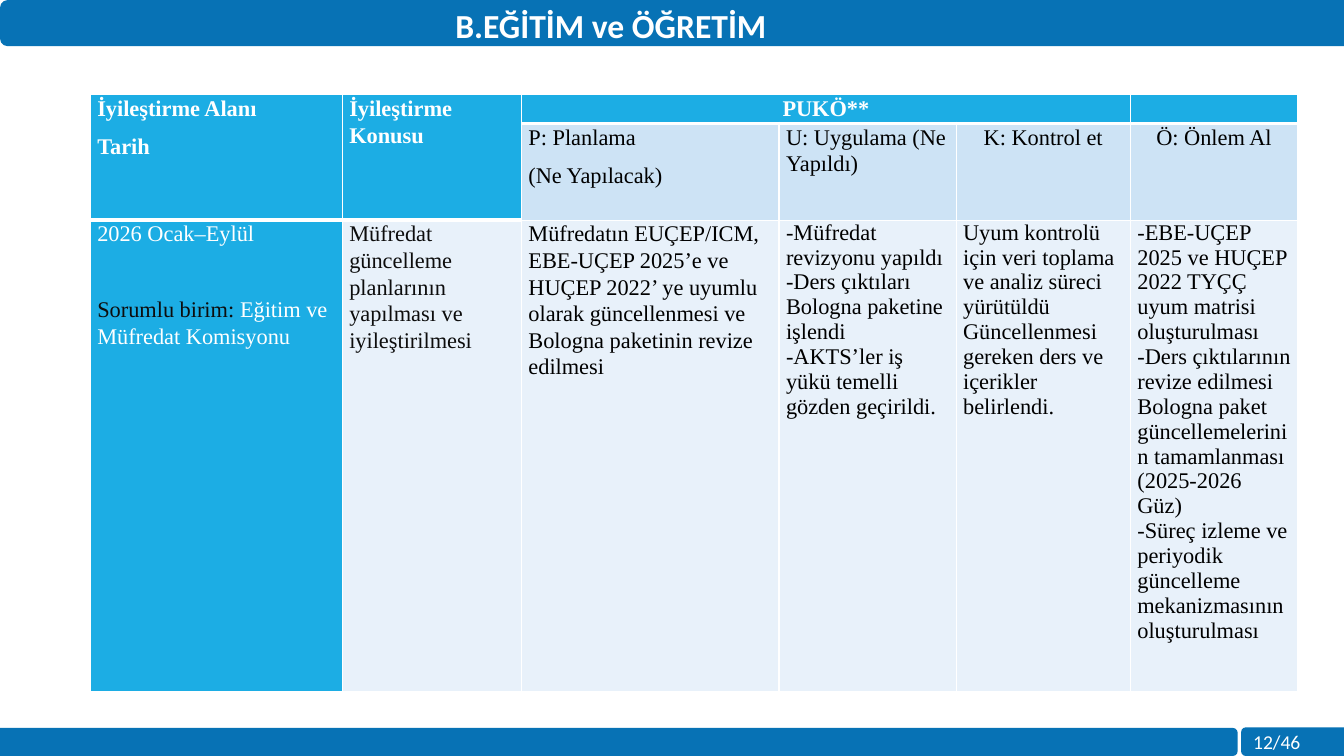
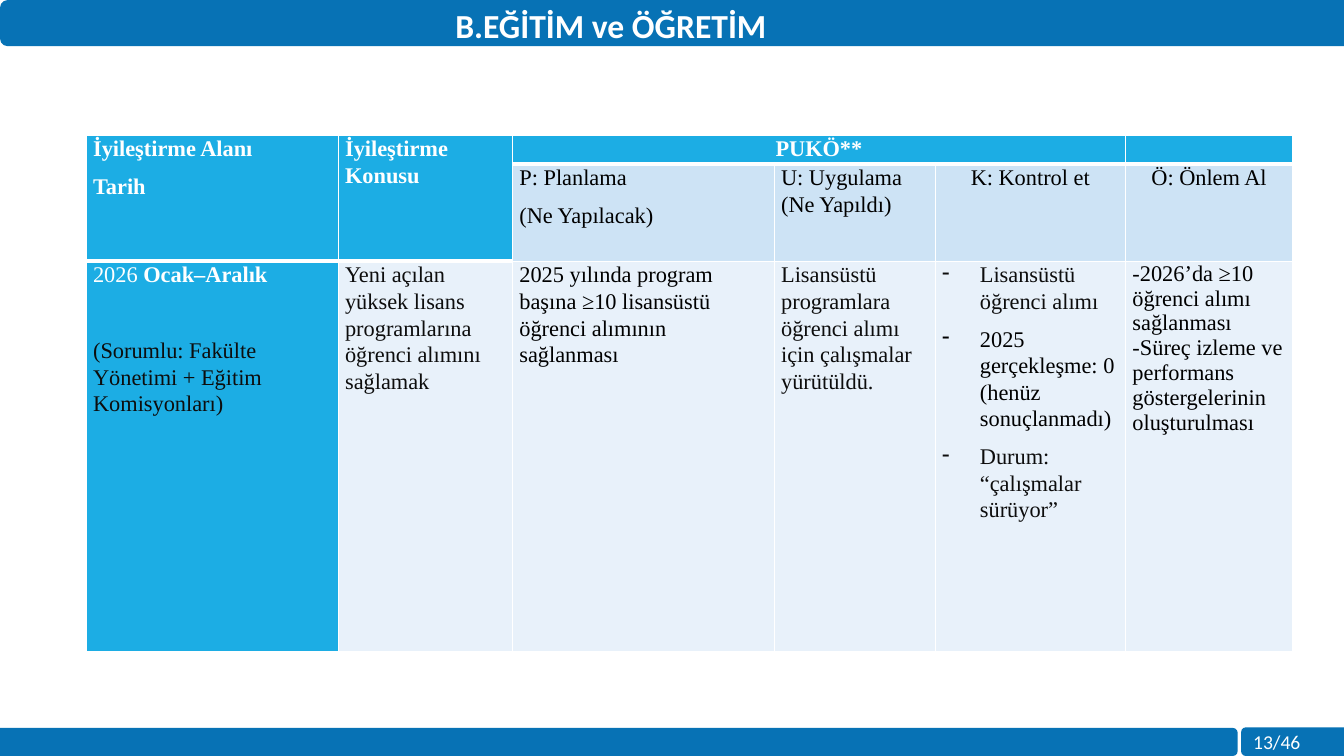
from lxml import etree
from pptx import Presentation
from pptx.dml.color import RGBColor
from pptx.enum.shapes import MSO_SHAPE
from pptx.enum.text import MSO_AUTO_SIZE, PP_ALIGN
from pptx.oxml.ns import qn
from pptx.util import Pt

CENTER = PP_ALIGN.CENTER
BAND_SHAPE = MSO_SHAPE.ROUND_2_SAME_RECTANGLE
FIT_SHAPE = MSO_AUTO_SIZE.SHAPE_TO_FIT_TEXT

COLORS = {
    "band": "0772B5",
    "header": "1CADE4",
    "subheader": "CDE3F5",
    "body": "E8F1FA",
    "white": "FFFFFF",
    "black": "000000",
    "ink": "0D0D0D",
}
SLIDE_WIDTH, SLIDE_HEIGHT = 960, 540
TITLE = "B.EĞİTİM ve ÖĞRETİM"
PAGE_COUNT = 46
ROUNDED_RIGHT, ROUNDED_LEFT = 90, 270
BULLET_INDENT = Pt(27)

TITLE_FONT = {"name": "Calibri", "size": Pt(24), "bold": True}
PAGE_FONT = {"name": "Calibri", "size": Pt(14), "bold": False}
TABLE_FONT = {"name": "Times New Roman", "size": Pt(16)}
CELL_FORMAT = {"margin_left": Pt(5), "margin_right": Pt(5), "margin_top": 0, "margin_bottom": 0}

SPACED = {"line_spacing": 1.07, "space_after": Pt(8)}
PARAGRAPH_FORMATS = {
    "tight": {},
    "spaced": SPACED,
    "bullet": SPACED,
    "centered": {**SPACED, "alignment": CENTER},
    "detached": {**SPACED, "space_before": Pt(27)},
}


def line(text, style="spaced", color="black", bold=False):
    return style, [(text, color, bold)]


def tight_lines(*texts):
    return [line(text, "tight") for text in texts]


def header_line(text, style="spaced"):
    return line(text, style, "white", True)


HEADER_ROWS = [
    [
        [header_line("İyileştirme Alanı"), header_line("Tarih")],
        [header_line("İyileştirme Konusu")],
        [header_line("PUKÖ**", "centered")],
        None,
        None,
        [],
    ],
    [
        None,
        None,
        [line("P: Planlama"), line("(Ne Yapılacak)")],
        [line("U: Uygulama (Ne Yapıldı)")],
        [line("K: Kontrol et", "centered")],
        [line("Ö: Önlem Al", "centered")],
    ],
]

IMPROVEMENT_SLIDES = [
    {
        "page": 12,
        "origin": (64.5, 67.7),
        "columns": [180, 128, 184, 126.5, 124.5, 119.5],
        "rows": [20.5, 69, 337],
        "body": [
            [
                line("2026 Ocak–Eylül", color="white"),
                (
                    "detached",
                    [
                        ("Sorumlu birim: ", "ink", False),
                        ("Eğitim ve Müfredat Komisyonu", "white", False),
                    ],
                ),
            ],
            [line("Müfredat güncelleme planlarının yapılması ve iyileştirilmesi", color="ink")],
            [
                line(
                    "Müfredatın EUÇEP/ICM, EBE-UÇEP 2025’e ve HUÇEP 2022’ ye uyumlu "
                    "olarak güncellenmesi ve Bologna paketinin revize edilmesi"
                )
            ],
            tight_lines(
                "-Müfredat revizyonu yapıldı",
                "-Ders çıktıları Bologna paketine işlendi",
                "-AKTS’ler iş yükü temelli gözden geçirildi.",
            ),
            tight_lines(
                "Uyum kontrolü için veri toplama ve analiz süreci yürütüldü",
                "Güncellenmesi gereken ders ve içerikler belirlendi.",
            ),
            tight_lines(
                "-EBE-UÇEP 2025 ve HUÇEP 2022 TYÇÇ uyum matrisi oluşturulması",
                "-Ders çıktılarının revize edilmesi",
                "Bologna paket güncellemelerinin tamamlanması (2025-2026 Güz)",
                "-Süreç izleme ve periyodik güncelleme mekanizmasının oluşturulması",
            ),
        ],
    },
    {
        "page": 13,
        "origin": (61.5, 96.5),
        "columns": [180, 124.5, 187, 115, 136, 119.5],
        "rows": [20.5, 69.5, 279],
        "body": [
            [
                ("spaced", [("2026 ", "white", False), ("Ocak–Aralık", "white", True)]),
                line("(Sorumlu: Fakülte Yönetimi + Eğitim Komisyonları)", "detached", "ink"),
            ],
            [line("Yeni açılan yüksek lisans programlarına öğrenci alımını sağlamak", color="ink")],
            [line("2025 yılında program başına ≥10 lisansüstü öğrenci alımının sağlanması")],
            [
                line(
                    "Lisansüstü programlara öğrenci alımı için çalışmalar yürütüldü.",
                    color="ink",
                )
            ],
            [
                line("Lisansüstü öğrenci alımı", "bullet", "ink"),
                line("2025 gerçekleşme: 0 (henüz sonuçlanmadı)", "bullet"),
                line("Durum: “çalışmalar sürüyor”", "bullet", "ink"),
            ],
            tight_lines(
                "-2026’da ≥10 öğrenci alımı sağlanması",
                "-Süreç izleme ve performans göstergelerinin oluşturulması",
            ),
        ],
    },
]


def apply_format(target, values):
    for name, value in values.items():
        setattr(target, name, value)


def paint(fill, color):
    fill.solid()
    fill.fore_color.rgb = RGBColor.from_string(COLORS[color])


def add_run(paragraph, text, font_format, color):
    run = paragraph.add_run()
    run.text = text
    apply_format(run.font, font_format)
    run.font.color.rgb = RGBColor.from_string(COLORS[color])


def add_band(slide, left, top, width, height, rotation):
    shape = slide.shapes.add_shape(
        BAND_SHAPE,
        Pt(left + (width - height) / 2),
        Pt(top + (height - width) / 2),
        Pt(height),
        Pt(width),
    )
    shape.rotation = rotation
    shape.shadow.inherit = False
    paint(shape.fill, "band")
    shape.line.fill.background()


def add_label(slide, box, text, font_format, alignment=None):
    shape = slide.shapes.add_textbox(*map(Pt, box))
    frame = shape.text_frame
    apply_format(frame, {"word_wrap": True, "auto_size": FIT_SHAPE})
    paragraph = frame.paragraphs[0]
    paragraph.alignment = alignment
    add_run(paragraph, text, font_format, "white")


def add_frame(slide, page):
    add_band(slide, 0, SLIDE_HEIGHT - 20, 884, 20, ROUNDED_RIGHT)
    add_band(slide, 886.5, SLIDE_HEIGHT - 20.5, 73.5, 20.5, ROUNDED_LEFT)
    add_band(slide, 0, 0, SLIDE_WIDTH, 33, ROUNDED_LEFT)
    add_label(slide, (888, 517.5, 72, 24.5), f"{page}/{PAGE_COUNT}", PAGE_FONT)
    add_label(slide, (193.7, 0, 485.3, 36), TITLE, TITLE_FONT, CENTER)


def add_border(cell, edge, width):
    properties = cell._tc.get_or_add_tcPr()
    border = etree.SubElement(properties, qn(f"a:{edge}"), w=str(Pt(width)))
    fill = etree.SubElement(border, qn("a:solidFill"))
    etree.SubElement(fill, qn("a:srgbClr"), val=COLORS["white"])


def add_bullet(paragraph):
    properties = paragraph._p.get_or_add_pPr()
    properties.set("marL", str(BULLET_INDENT))
    properties.set("indent", str(-BULLET_INDENT))
    etree.SubElement(properties, qn("a:buChar"), char="-")


def write_cell(cell, lines):
    frame = cell.text_frame
    if not lines:
        size = str(int(TABLE_FONT["size"].pt * 100))
        etree.SubElement(frame.paragraphs[0]._p, qn("a:endParaRPr"), sz=size)
    for index, (style, runs) in enumerate(lines):
        paragraph = frame.add_paragraph() if index else frame.paragraphs[0]
        apply_format(paragraph, PARAGRAPH_FORMATS[style])
        if style == "bullet":
            add_bullet(paragraph)
        for text, color, bold in runs:
            add_run(paragraph, text, {**TABLE_FONT, "bold": bold}, color)


def cell_color(row, column):
    if row == 0 or column == 0 or (row == 1 and column == 1):
        return "header"
    return "subheader" if row == 1 else "body"


def add_improvement_table(slide, origin, columns, rows, body):
    left, top = origin
    table = slide.shapes.add_table(
        len(rows), len(columns), Pt(left), Pt(top), Pt(sum(columns)), Pt(sum(rows))
    ).table
    apply_format(table, {"first_row": False, "horz_banding": False})
    for column, width in zip(table.columns, columns):
        column.width = Pt(width)
    for row, height in zip(table.rows, rows):
        row.height = Pt(height)
    for column in (0, 1):
        table.cell(0, column).merge(table.cell(1, column))
    table.cell(0, 2).merge(table.cell(0, 4))
    for row, contents in enumerate([*HEADER_ROWS, body]):
        for column, lines in enumerate(contents):
            cell = table.cell(row, column)
            color = cell_color(row, column)
            add_border(cell, "lnR", 1)
            add_border(cell, "lnB", 3 if row < 2 and color == "header" else 1)
            paint(cell.fill, color)
            apply_format(cell, CELL_FORMAT)
            if lines is not None:
                write_cell(cell, lines)


def add_improvement_slide(presentation, page, **table_content):
    slide = presentation.slides.add_slide(presentation.slide_layouts[6])
    add_frame(slide, page)
    add_improvement_table(slide, **table_content)


def main():
    presentation = Presentation()
    apply_format(
        presentation, {"slide_width": Pt(SLIDE_WIDTH), "slide_height": Pt(SLIDE_HEIGHT)}
    )
    for content in IMPROVEMENT_SLIDES:
        add_improvement_slide(presentation, **content)
    presentation.save("out.pptx")


if __name__ == "__main__":
    main()
